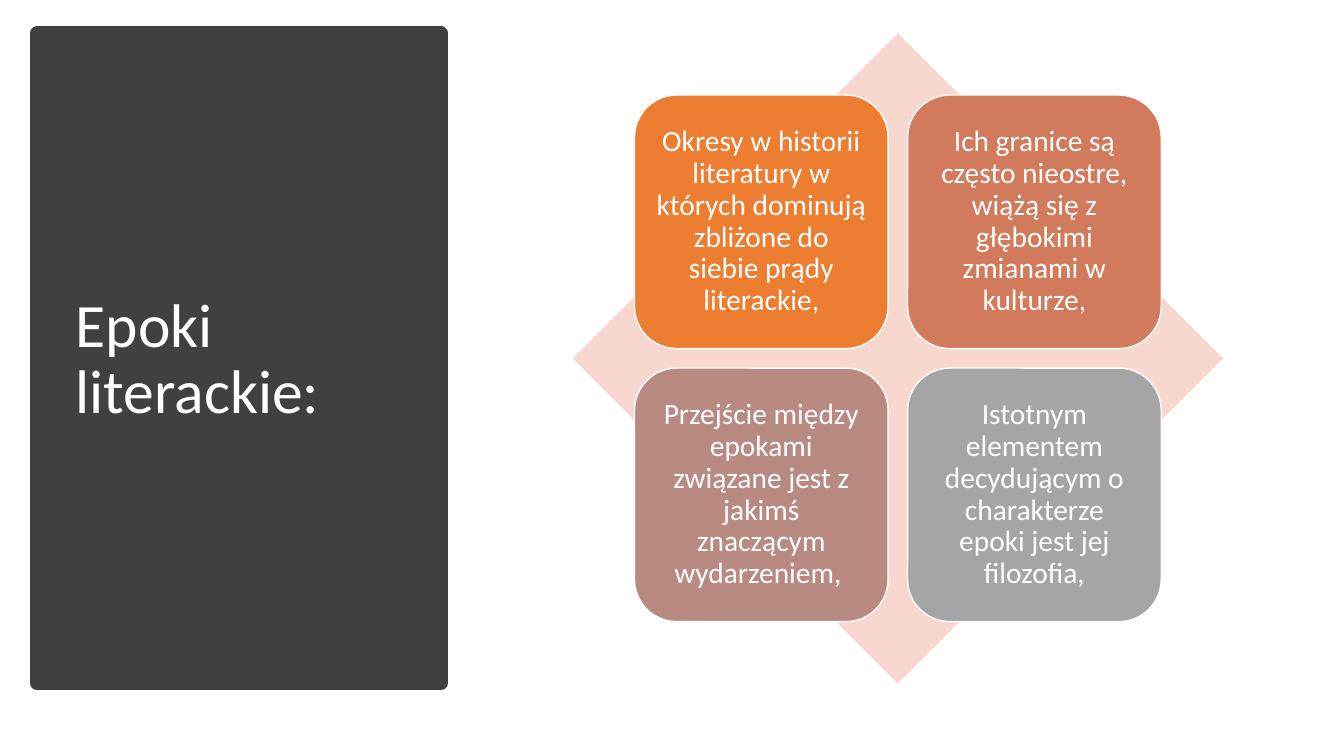
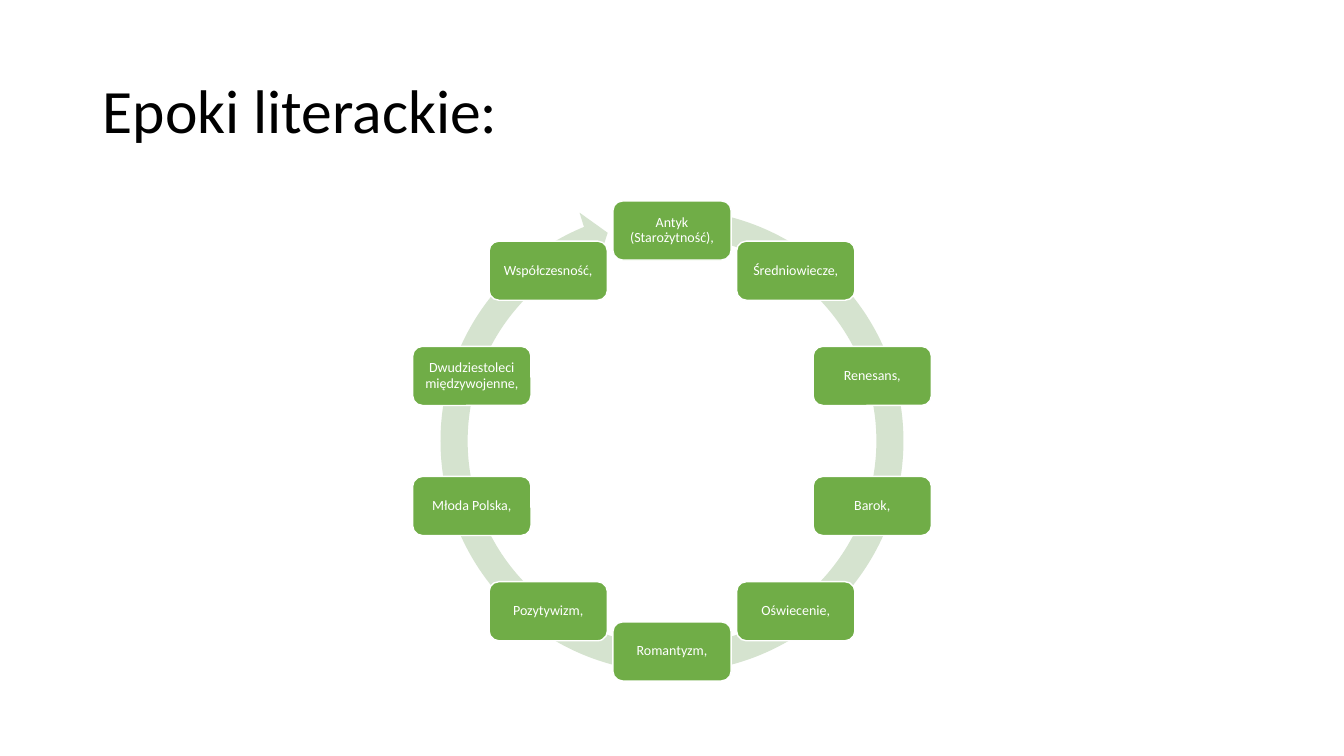
from collections import namedtuple
from math import cos, sin, tau

from pptx import Presentation
from pptx.dml.color import RGBColor
from pptx.enum.shapes import MSO_SHAPE as Preset
from pptx.enum.text import MSO_ANCHOR as Anchor, MSO_AUTO_SIZE as AutoSize, PP_ALIGN as Align
from pptx.util import Inches, Pt

WHITE = RGBColor(0xFF, 0xFF, 0xFF)
BLACK = RGBColor(0x00, 0x00, 0x00)
CHARCOAL = RGBColor(0x40, 0x40, 0x40)
BLUSH = RGBColor(0xF8, 0xD7, 0xCE)
ORANGE = RGBColor(0xED, 0x7D, 0x31)
TERRACOTTA = RGBColor(0xD1, 0x7B, 0x5C)
ROSE = RGBColor(0xB9, 0x8A, 0x82)
GRAY = RGBColor(0xA5, 0xA5, 0xA5)
GREEN = RGBColor(0x70, 0xAD, 0x47)
PALE_GREEN = RGBColor(0xD5, 0xE3, 0xCF)

FONT = "Calibri"
TITLE = "Epoki literackie:"
TITLE_ONLY = 5
RING_ARROW = (0.055, 3.307, 148.395, 167.67, 0.058)

TRAITS = (
    ("Okresy w historii literatury w których dominują zbliżone do siebie prądy literackie,", ORANGE),
    ("Ich granice są często nieostre, wiążą się z głębokimi zmianami w kulturze,", TERRACOTTA),
    ("Przejście między epokami związane jest z jakimś znaczącym wydarzeniem, ", ROSE),
    ("Istotnym elementem decydującym o charakterze epoki jest jej filozofia,", GRAY),
)
EPOCHS = (
    "Antyk (Starożytność),", "Średniowiecze,", "Renesans,", "Barok,", "Oświecenie,",
    "Romantyzm,", "Pozytywizm,", "Młoda Polska,", "Dwudziestoleci międzywojenne,",
    "Współczesność,",
)

Box = namedtuple("Box", "left top width height")


def part_of(box, left, top, width, height):
    return Box(box.left + left * box.width, box.top + top * box.height,
               width * box.width, height * box.height)


def write(shape, text, size, color, align, inset=(0.1, 0.05)):
    frame = shape.text_frame
    frame.word_wrap = True
    frame.auto_size = AutoSize.NONE
    frame.vertical_anchor = Anchor.MIDDLE
    frame.margin_left = frame.margin_right = Inches(inset[0])
    frame.margin_top = frame.margin_bottom = Inches(inset[1])
    para = frame.paragraphs[0]
    para.alignment = align
    para.line_spacing = 0.9
    span = para.add_run()
    span.text = text
    span.font.name = FONT
    span.font.size = Pt(size)
    span.font.color.rgb = color


def add_block(page, preset, box, fill, outline=None):
    block = page.shapes.add_shape(preset, *map(Inches, box))
    block.shadow.inherit = False
    block.fill.solid()
    block.fill.fore_color.rgb = fill
    if outline is None:
        block.line.fill.background()
    else:
        block.line.color.rgb = outline
        block.line.width = Pt(1)
    return block


def add_card(page, box, fill, text, size, inset):
    card = add_block(page, Preset.ROUNDED_RECTANGLE, box, fill, WHITE)
    write(card, text, size, WHITE, Align.CENTER, (inset, inset))


def add_page(deck, title_box, title_color):
    page = deck.slides.add_slide(deck.slide_layouts[TITLE_ONLY])
    title = page.shapes.title
    title.left, title.top, title.width, title.height = map(Inches, title_box)
    write(title, TITLE, 44, title_color, Align.LEFT)
    return page


def add_title_panel(page, box):
    panel = add_block(page, Preset.RECTANGLE, box, CHARCOAL, CHARCOAL)
    panel.line.width = Pt(10)
    page.shapes.title.element.addprevious(panel.element)


def add_trait_matrix(page, box):
    add_block(page, Preset.DIAMOND, box, BLUSH)
    for index, (text, fill) in enumerate(TRAITS):
        row, column = divmod(index, 2)
        tile = part_of(box, 0.095 + 0.42 * column, 0.095 + 0.42 * row, 0.39, 0.39)
        add_card(page, tile, fill, text, 21, 0.09)


def add_epoch_ring(page, box):
    arrow = add_block(page, Preset.CIRCULAR_ARROW, box, PALE_GREEN)
    for index, value in enumerate(RING_ARROW):
        arrow.adjustments[index] = value
    radius, width, height = 0.427, 0.24, 0.12
    for index, epoch in enumerate(EPOCHS):
        angle = tau * index / len(EPOCHS)
        node = part_of(box, 0.5 + radius * sin(angle) - width / 2,
                       0.5 - radius * cos(angle) - height / 2, width, height)
        add_card(page, node, GREEN, epoch, 10, 0.04)


def main():
    deck = Presentation()
    deck.slide_width, deck.slide_height = Inches(13.33), Inches(7.5)

    traits_page = add_page(deck, Box(0.65, 0.7, 3.46, 5.75), WHITE)
    add_title_panel(traits_page, Box(0.37, 0.33, 4, 6.45))
    add_trait_matrix(traits_page, Box(5.68, 0.33, 6.45, 6.45))

    epochs_page = add_page(deck, Box(0.92, 0.4, 11.5, 1.45), BLACK)
    add_epoch_ring(epochs_page, Box(4.22, 1.93, 4.89, 4.89))

    deck.save("out.pptx")


if __name__ == "__main__":
    main()
